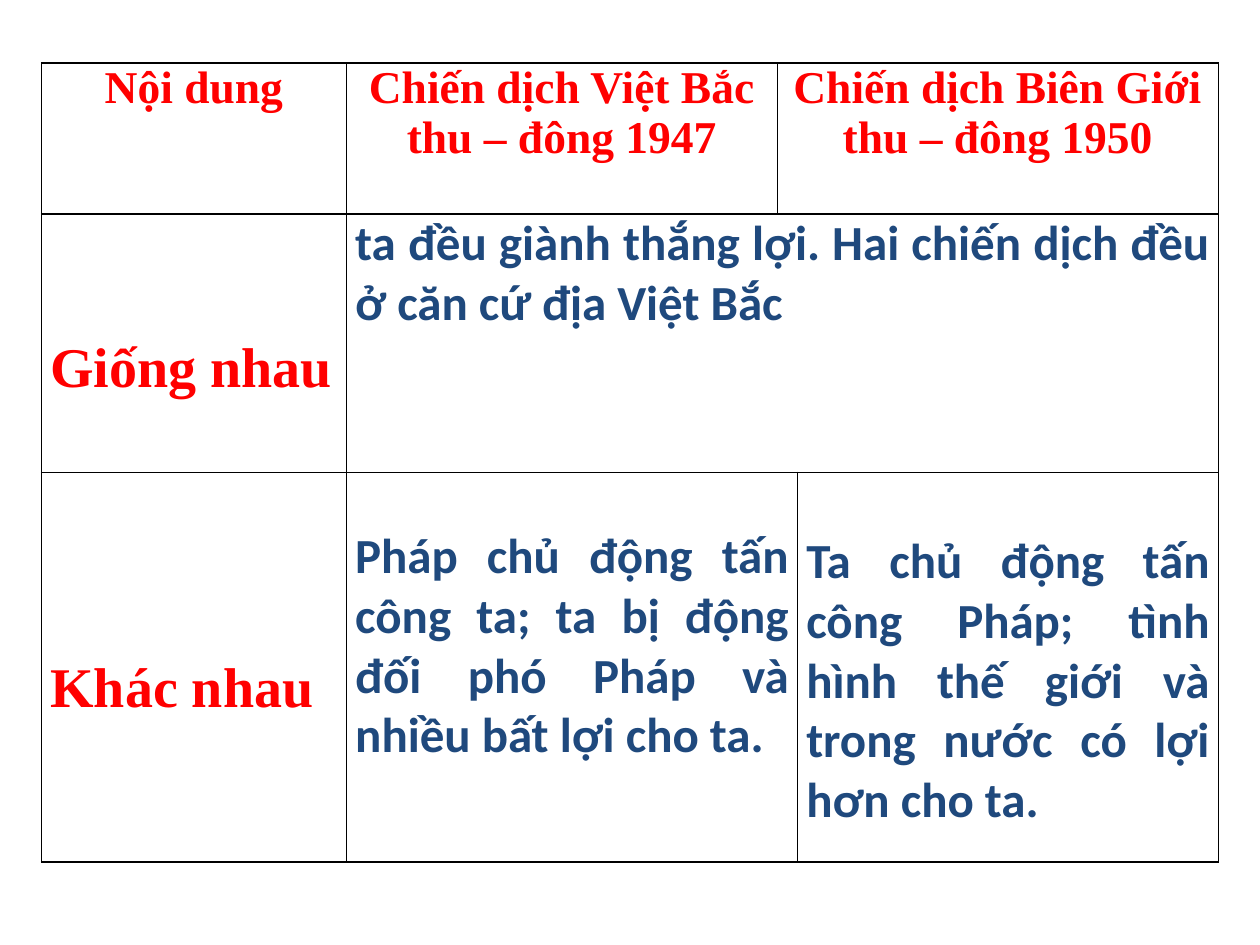
from dataclasses import dataclass
from typing import Any

from lxml.etree import SubElement as Sub
from pptx import Presentation
from pptx.dml.color import RGBColor
from pptx.enum.text import PP_ALIGN as Align
from pptx.oxml.ns import qn
from pptx.util import Inches, Pt

COLS = [2.42, 3.42, 0.16, 3.34]
ROWS = [1.2, 2.05, 3.09]
LINE = 0.49


def tint(code):
    """Turn a hex string into a colour."""
    return RGBColor.from_string(code)


@dataclass
class Deck:
    """Hold the style and the current slide."""
    slide: Any
    head: str = "Times New Roman"
    body: str = "Calibri"
    red: str = "FF0000"
    blue: str = "1F497D"
    ink: str = "000000"
    paper: str = "FFFFFF"
    pad: float = 0.07

    def grid(self, left, top, cols, rows):
        """Add a plain ruled table with the given column and row sizes."""
        size = [Inches(v) for v in (left, top, sum(cols), sum(rows))]
        table = self.slide.shapes.add_table(len(rows), len(cols), *size).table
        table.first_row = table.horz_banding = False
        for col, wide in zip(table.columns, cols):
            col.width = Inches(wide)
        for row, high in zip(table.rows, rows):
            row.height = Inches(high)
            for cell in row.cells:
                self.rule(cell)
        return table

    def rule(self, cell):
        """Give a cell its borders, fill and margins."""
        props = cell._tc.get_or_add_tcPr()
        for side in "LRTB":
            line = Sub(props, qn(f"a:ln{side}"), w=str(Pt(1)))
            fill = Sub(line, qn("a:solidFill"))
            Sub(fill, qn("a:srgbClr"), val=self.ink)
        cell.fill.solid()
        cell.fill.fore_color.rgb = tint(self.paper)
        cell.margin_left = cell.margin_right = Inches(self.pad)
        cell.margin_top = cell.margin_bottom = 0

    def put(self, cell, text, size, face, hue, align=Align.JUSTIFY, drop=0):
        """Put one bold run in a cell, dropped from its top edge."""
        cell.margin_top = Inches(drop)
        para = cell.text_frame.paragraphs[0]
        para.alignment = align
        run = para.add_run()
        run.text = text
        font = run.font
        font.name, font.size, font.bold = face, Pt(size), True
        font.color.rgb = tint(hue)

    def title(self, cell, text):
        """Put a column heading in a cell."""
        self.put(cell, text, 26, self.head, self.red, Align.CENTER)

    def label(self, cell, text, lines):
        """Put a row heading some lines down."""
        self.put(cell, text, 32, self.head, self.red, drop=lines * LINE)

    def note(self, cell, text, drop=0):
        """Put body text in a cell."""
        self.put(cell, text, 28, self.body, self.blue, drop=drop)


def main():
    """Build the comparison slide."""
    show = Presentation()
    show.slide_width, show.slide_height = Inches(10), Inches(7.5)
    deck = Deck(show.slides.add_slide(show.slide_layouts[6]))
    table = deck.grid(0.33, 0.5, COLS, ROWS)
    cell = table.cell
    for row, first, last in [(0, 2, 3), (1, 1, 3), (2, 1, 2)]:
        cell(row, first).merge(cell(row, last))

    heads = ["Nội dung", "Chiến dịch Việt Bắc thu – đông 1947",
             "Chiến dịch Biên Giới thu – đông 1950"]
    for col, text in enumerate(heads):
        deck.title(cell(0, col), text)
    for row, text in enumerate(["Giống nhau", "Khác nhau"], 1):
        deck.label(cell(row, 0), text, row + 1)

    deck.note(cell(1, 1), "ta đều giành thắng lợi. Hai chiến dịch đều "
              "ở căn cứ địa Việt Bắc")
    deck.note(cell(2, 1), "Pháp chủ động tấn công ta; ta bị động đối phó "
              "Pháp và nhiều bất lợi cho ta.", 0.43)
    deck.note(cell(2, 3), "Ta chủ động tấn công Pháp; tình hình thế giới "
              "và trong nước có lợi hơn cho ta.", 0.47)
    show.save("out.pptx")


if __name__ == "__main__":
    main()
